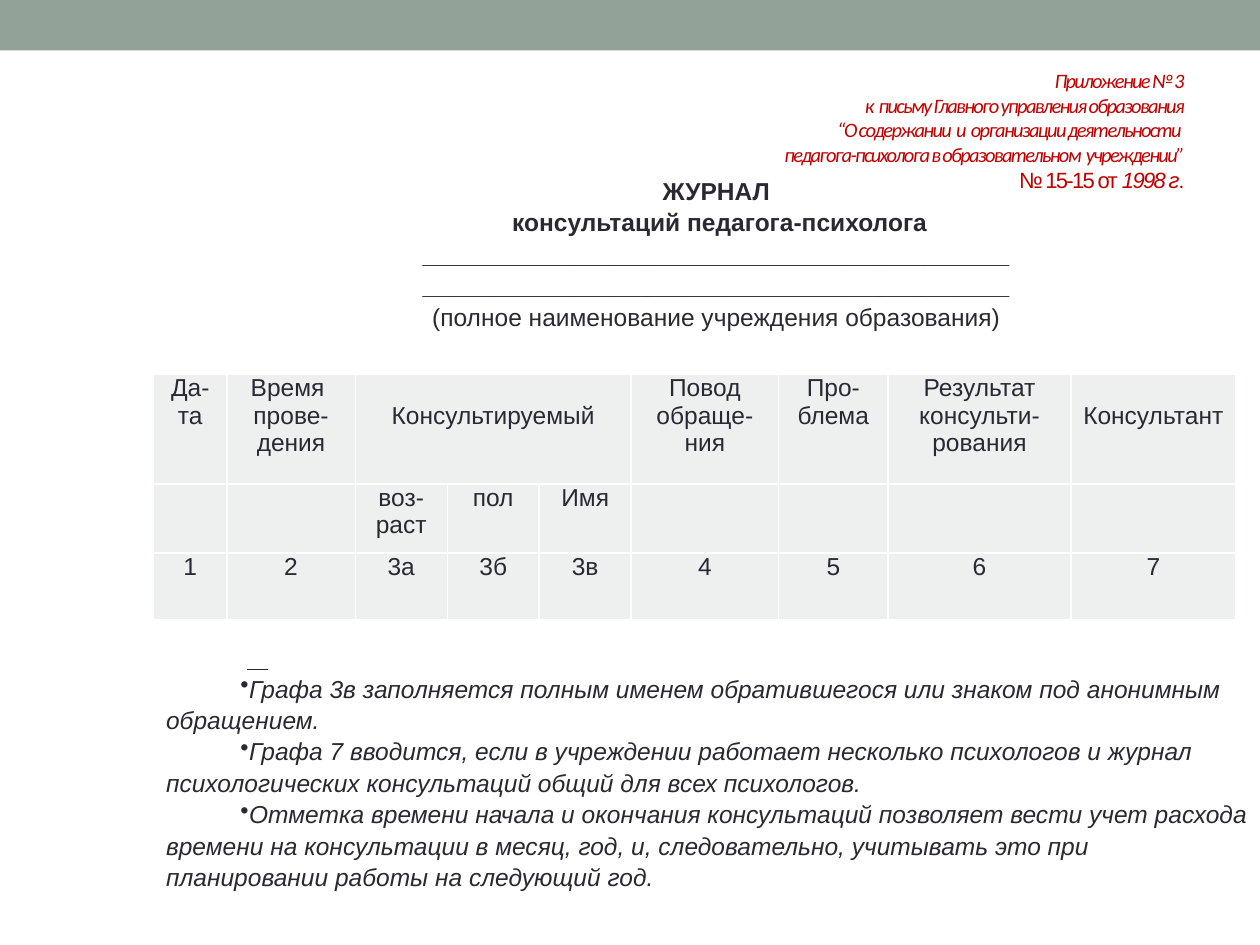
import pptx
import pptx.util
import pptx.dml.color
import pptx.enum.shapes
import pptx.enum.text
import pptx.oxml
import pptx.oxml.ns

Inches, Pt = pptx.util.Inches, pptx.util.Pt
align = pptx.enum.text.PP_ALIGN
anchor = pptx.enum.text.MSO_ANCHOR
ns = pptx.oxml.ns.nsdecls("a")


def style(run, size=14, face="Arial", color="292934", bold=False, italic=False):
    font = run.font
    font.size, font.name = Pt(size), face
    font.bold, font.italic = bold, italic
    font.color.rgb = pptx.dml.color.RGBColor.from_string(color)


def add_box(left, top, width, height, lines):
    box = slide.shapes.add_textbox(Inches(left), Inches(top), Inches(width), Inches(height))
    frame = box.text_frame
    frame.word_wrap = True
    frame.text = "\n".join(lines)
    return frame


deck = pptx.Presentation()
deck.slide_width, deck.slide_height = Inches(10), Inches(7.5)
slide = deck.slides.add_slide(deck.slide_layouts[6])

band = slide.shapes.add_shape(
    pptx.enum.shapes.MSO_SHAPE.RECTANGLE, 0, 0, Inches(10), Inches(0.4))
band.shadow.inherit = False
band.fill.solid()
band.fill.fore_color.rgb = pptx.dml.color.RGBColor.from_string("93A299")
band.line.fill.background()

title = add_box(0.5, 0.58, 9, 1.08, [
    "Приложение № 3",
    "к  письму Главного управления образования",
    "“О содержании  и  организации деятельности ",
    "педагога-психолога в образовательном  учреждении”",
    "№ 15-15 от ",
])
title.vertical_anchor = anchor.MIDDLE
title.margin_top, title.margin_bottom = 0, Inches(0.17)
last = title.paragraphs[-1]
for text in ("1998 г", "."):
    last.add_run().text = text
for para in title.paragraphs:
    para.alignment = align.RIGHT
    for run in para.runs:
        style(run, 11.7, "Calibri", "C00000", italic=True)
for run, size, face, slant in zip(
        last.runs, (12.6, 12.6, 11.7), ("Arial", "Arial", "Calibri"), (False, True, True)):
    style(run, size, face, "C00000", italic=slant)
for para in title.paragraphs:
    for run in para.runs:
        run._r.get_or_add_rPr().set("spc", "-100")

widths = [0.58, 1.02, 0.73, 0.73, 0.73, 1.17, 0.87, 1.45, 1.31]
heights = [0.87, 0.55, 0.53]
rows = [
    ["Да-та", "Время \nпрове-дения", "Консультируемый", "", "", "Повод обраще-ния",
     "Про-блема", "Результат консульти-рования", "Консультант"],
    ["", "", "воз-раст", "пол", "Имя", "", "", "", ""],
    ["1", "2", "3а", "3б", "3в", "4", "5", "6", "7"],
]
table = slide.shapes.add_table(
    len(rows), len(widths), Inches(1.22), Inches(2.97), Inches(8.58), Inches(1.95)).table
for col, width in zip(table.columns, widths):
    col.width = Inches(width)
for row, height in zip(table.rows, heights):
    row.height = Inches(height)
for r, row in enumerate(rows):
    for c, text in enumerate(row):
        cell = table.cell(r, c)
        cell.text_frame.text = text
        cell.margin_left = cell.margin_right = Inches(0.07)
        low = text in ("Консультируемый", "Консультант")
        cell.margin_top = Inches(0.22) if low else 0
        cell.margin_bottom = 0
        for para in cell.text_frame.paragraphs:
            para.alignment = align.CENTER
            para.font.size = Pt(14)
            for run in para.runs:
                style(run)
        props = cell._tc.get_or_add_tcPr()
        for side in "LRTB":
            props.append(pptx.oxml.parse_xml(
                f'<a:ln{side} {ns} w="12700"><a:solidFill><a:srgbClr val="FFFFFF"/>'
                f'</a:solidFill></a:ln{side}>'))
        cell.fill.solid()
        cell.fill.fore_color.rgb = pptx.dml.color.RGBColor.from_string("EEF0EF")
table.cell(0, 2).merge(table.cell(0, 4))

rule = "_" * 43
head = add_box(0.98, 1.31, 8.82, 1.52, [
    "ЖУРНАЛ", " консультаций педагога-психолога", rule, rule,
    "(полное наименование учреждения образования)",
])
notes = add_box(1.22, 5.01, 8.8, 2.46, [
    " ",
    "Графа 3в заполняется полным именем обратившегося или знаком под анонимным обращением.",
    "Графа 7 вводится, если в учреждении работает несколько психологов и журнал "
    "психологических консультаций общий для всех психологов.",
    "Отметка времени начала и окончания консультаций позволяет вести учет расхода времени "
    "на консультации в месяц, год, и, следовательно, учитывать это при планировании работы "
    "на следующий год.",
])
mark = notes.paragraphs[0].add_run()
mark.text = "   "
mark.font.underline = True
for frame in (head, notes):
    frame.margin_top = Inches(0.07)
    for n, para in enumerate(frame.paragraphs):
        para.line_spacing = 1.07
        props = para._p.get_or_add_pPr()
        props.set("marL", "0")
        props.set("indent", str(Inches(0.59)))
        if frame is head:
            para.alignment = align.CENTER
        elif n:
            props.append(pptx.oxml.parse_xml(f'<a:buChar {ns} char="•"/>'))
        for run in para.runs:
            style(run, bold=frame is head and n < 4, italic=frame is notes)

deck.save("out.pptx")
